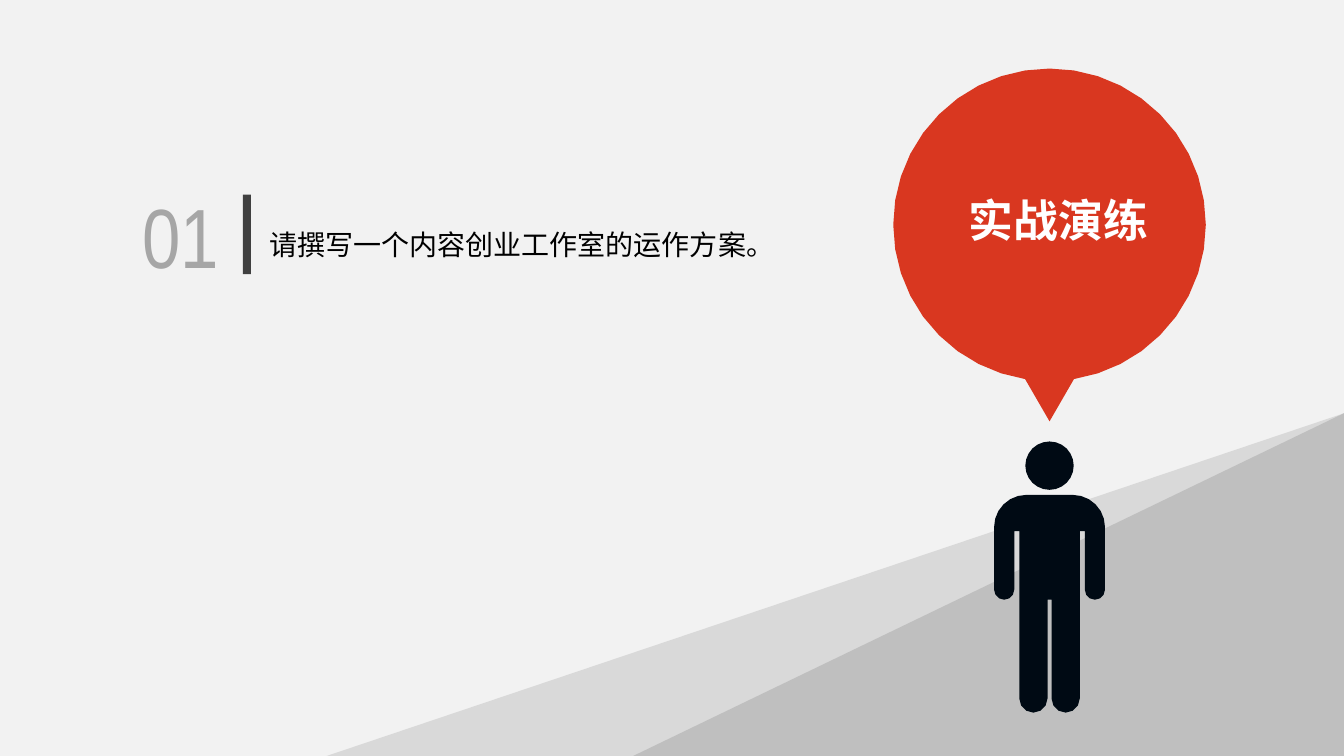
from dataclasses import dataclass
from math import cos, radians, sin

from pptx import Presentation
from pptx.dml.color import RGBColor
from pptx.enum.shapes import MSO_SHAPE
from pptx.enum.text import MSO_AUTO_SIZE
from pptx.util import Inches, Pt


@dataclass(frozen=True)
class Theme:
    paper: str = "F2F2F2"
    light_slope: str = "D9D9D9"
    dark_slope: str = "BFBFBF"
    figure: str = "000A14"
    bubble: str = "D93720"
    bar: str = "404040"
    number: str = "A6A6A6"
    white: str = "FFFFFF"
    black: str = "000000"
    number_size: int = 60
    title_size: int = 32
    body_size: int = 20


theme = Theme()
prs = Presentation()
prs.slide_width, prs.slide_height = Inches(13.33), Inches(7.5)
s = prs.slides.add_slide(prs.slide_layouts[6])


def add_text(text, *, at, size, color, font="Arial", bold=False, wrap=False):
    tf = s.shapes.add_textbox(*map(Inches, at)).text_frame
    tf.margin_left = tf.margin_right = 0
    tf.word_wrap = wrap
    tf.auto_size = MSO_AUTO_SIZE.SHAPE_TO_FIT_TEXT
    r = tf.paragraphs[0].add_run()
    r.text = text
    r.font.name, r.font.size, r.font.bold = font, Pt(size), bold
    r.font.color.rgb = RGBColor.from_string(color)


def arc(cx, cy, radius, start, end, step):
    """Points along an arc, clockwise from the right, in degrees."""
    return [(cx + radius * cos(radians(a)), cy + radius * sin(radians(a)))
            for a in range(start, end + 1, step)]


# Person: the right half, as offsets from the centre line, is mirrored
center_x = 10.41
right_half = [
    *arc(0.23, 5.23, 0.32, -90, 0, 15),    # shoulder
    *arc(0.45, 5.85, 0.1, 0, 180, 30),     # hand
    (0.35, 5.27), (0.3, 5.27),             # armpit
    *arc(0.16, 6.93, 0.14, 0, 180, 30),    # foot
    (0.02, 5.95),                          # crotch
]
body = [(center_x + x, y) for x, y in right_half]
body += [(center_x - x, y) for x, y in reversed(right_half)]
head = arc(center_x, 4.62, 0.24, 0, 345, 15)

# Speech bubble: a circle left open by 18 degrees for its tip
bubble = arc(center_x, 2.23, 1.55, 99, 441, 9) + [(center_x, 4.18)]

# Paper, slopes and divider bar
drawn = []
for kind, at, color in [
    (MSO_SHAPE.RECTANGLE, (0, 0, 13.33, 7.5), theme.paper),
    (MSO_SHAPE.RIGHT_TRIANGLE, (3.24, 4.1, 10.09, 3.4), theme.light_slope),
    (MSO_SHAPE.RIGHT_TRIANGLE, (6.28, 4.1, 7.05, 3.4), theme.dark_slope),
    (MSO_SHAPE.RECTANGLE, (2.41, 1.93, 0.08, 0.79), theme.bar),
]:
    sp = s.shapes.add_shape(kind, *map(Inches, at))
    if kind == MSO_SHAPE.RIGHT_TRIANGLE:
        sp.element.spPr.xfrm.set("flipH", "1")
    drawn.append((sp, color))

# Person and bubble, each one shape made of closed contours
for contours, color in [([body, head], theme.figure), ([bubble], theme.bubble)]:
    builder = s.shapes.build_freeform()
    for contour in contours:
        points = [(Inches(x), Inches(y)) for x, y in contour]
        builder.move_to(*points[0])
        builder.add_line_segments(points[1:], close=True)
    drawn.append((builder.convert_to_shape(), color))

for sp, color in drawn:
    sp.shadow.inherit = False
    sp.fill.solid()
    sp.fill.fore_color.rgb = RGBColor.from_string(color)
    sp.line.fill.background()

# Text
add_text("实战演练", at=(9.61, 1.86, 1.8, 0.64),
         size=theme.title_size, color=theme.white, bold=True)
add_text("请撰写一个内容创业工作室的运作方案。", at=(2.67, 2.21, 5.15, 0.44),
         size=theme.body_size, color=theme.black, wrap=True)
add_text("01", at=(1.41, 1.78, 0.77, 1.11),
         size=theme.number_size, color=theme.number, font="Arial Narrow")

prs.save("out.pptx")
